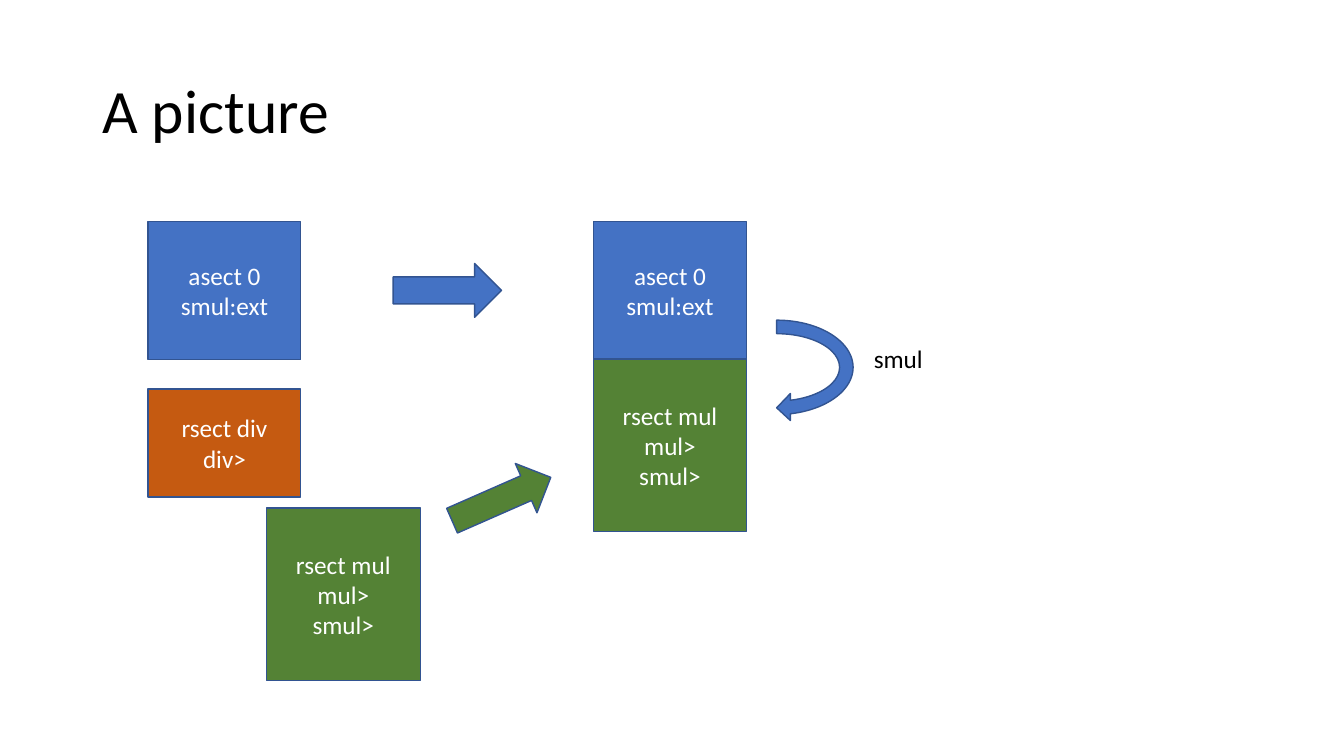
"""Build a slide showing how object sections are linked into one image."""

from dataclasses import dataclass

from pptx import Presentation
from pptx.dml.color import RGBColor
from pptx.enum.shapes import MSO_SHAPE
from pptx.enum.text import MSO_ANCHOR, MSO_AUTO_SIZE, PP_ALIGN
from pptx.shapes.autoshape import Shape
from pptx.slide import Slide
from pptx.text.text import TextFrame
from pptx.util import Pt

RECTANGLE = MSO_SHAPE.RECTANGLE
RIGHT_ARROW = MSO_SHAPE.RIGHT_ARROW
CIRCULAR_ARROW = MSO_SHAPE.CIRCULAR_ARROW
LEFT = PP_ALIGN.LEFT
CENTER = PP_ALIGN.CENTER
MIDDLE = MSO_ANCHOR.MIDDLE
NO_AUTO_SIZE = MSO_AUTO_SIZE.NONE
FIT_SHAPE = MSO_AUTO_SIZE.SHAPE_TO_FIT_TEXT
TITLE_ONLY_LAYOUT = 5


@dataclass(frozen=True)
class Theme:
    font: str = "Calibri"
    title_size: float = 44
    body_size: float = 18
    line_width: float = 1
    black: RGBColor = RGBColor(0x00, 0x00, 0x00)
    white: RGBColor = RGBColor(0xFF, 0xFF, 0xFF)
    blue: RGBColor = RGBColor(0x44, 0x72, 0xC4)
    green: RGBColor = RGBColor(0x54, 0x82, 0x35)
    orange: RGBColor = RGBColor(0xC5, 0x5A, 0x11)
    outline: RGBColor = RGBColor(0x32, 0x54, 0x91)


THEME = Theme()


@dataclass(frozen=True)
class Box:
    left: float
    top: float
    width: float
    height: float


@dataclass(frozen=True)
class Section:
    lines: tuple[str, ...]
    fill: RGBColor
    height: float


@dataclass(frozen=True)
class PlacedSection:
    section: Section
    left: float
    top: float
    width: float


@dataclass(frozen=True)
class Arrow:
    kind: MSO_SHAPE
    box: Box
    fill: RGBColor
    rotation: float = 0


MAIN = Section(("asect 0", "smul:ext"), THEME.blue, 98.64)
DIVIDE = Section(("rsect div", "div>"), THEME.orange, 77.04)
MULTIPLY = Section(("rsect mul", "mul>", "smul>"), THEME.green, 123.12)

SOURCE_LEFT = 105.84
IMAGE_LEFT = 424.08
FIRST_TOP = 158.4
SECTION_WIDTH = 109

SECTIONS = (
    PlacedSection(MAIN, SOURCE_LEFT, FIRST_TOP, SECTION_WIDTH),
    PlacedSection(MULTIPLY, 190.2, 362.88, 110),
    PlacedSection(DIVIDE, SOURCE_LEFT, 277.92, SECTION_WIDTH),
    PlacedSection(MAIN, IMAGE_LEFT, FIRST_TOP, SECTION_WIDTH),
    PlacedSection(MULTIPLY, IMAGE_LEFT, FIRST_TOP + MAIN.height - 0.5, SECTION_WIDTH),
)

ARROWS = (
    Arrow(RIGHT_ARROW, Box(280.8, 188.2, 77.5, 38.5), THEME.blue),
    Arrow(RIGHT_ARROW, Box(319.68, 337.2, 77.04, 38.5), THEME.green, 336.3),
    Arrow(CIRCULAR_ARROW, Box(516.24, 203.04, 77.04, 118.8), THEME.blue, 90),
)

TITLE_BOX = Box(66, 28.75, 828, 104.4)
LABEL_BOX = Box(617.04, 241.92, 49.68, 29)


def write_lines(
    frame: TextFrame, lines: tuple[str, ...], size: float, color: RGBColor, alignment: PP_ALIGN
) -> None:
    for index, line in enumerate(lines):
        paragraph = frame.paragraphs[0] if index == 0 else frame.add_paragraph()
        paragraph.alignment = alignment
        run = paragraph.add_run()
        run.text = line
        run.font.name = THEME.font
        run.font.size = Pt(size)
        run.font.color.rgb = color


def add_outlined_shape(slide: Slide, kind: MSO_SHAPE, box: Box, fill: RGBColor) -> Shape:
    shape = slide.shapes.add_shape(
        kind, Pt(box.left), Pt(box.top), Pt(box.width), Pt(box.height)
    )
    shape.shadow.inherit = False
    shape.fill.solid()
    shape.fill.fore_color.rgb = fill
    shape.line.color.rgb = THEME.outline
    shape.line.width = Pt(THEME.line_width)
    return shape


def add_section(slide: Slide, placed: PlacedSection) -> None:
    section = placed.section
    box = Box(placed.left, placed.top, placed.width, section.height)
    shape = add_outlined_shape(slide, RECTANGLE, box, section.fill)
    shape.text_frame.vertical_anchor = MIDDLE
    write_lines(shape.text_frame, section.lines, THEME.body_size, THEME.white, CENTER)


def add_arrow(slide: Slide, arrow: Arrow) -> None:
    shape = add_outlined_shape(slide, arrow.kind, arrow.box, arrow.fill)
    shape.rotation = arrow.rotation


def add_title(slide: Slide, text: str, box: Box) -> None:
    title = slide.shapes.title
    title.left, title.top = Pt(box.left), Pt(box.top)
    title.width, title.height = Pt(box.width), Pt(box.height)
    frame = title.text_frame
    frame.auto_size = NO_AUTO_SIZE
    frame.vertical_anchor = MIDDLE
    write_lines(frame, (text,), THEME.title_size, THEME.black, LEFT)
    frame.paragraphs[0].line_spacing = 0.9


def add_label(slide: Slide, text: str, box: Box) -> None:
    label = slide.shapes.add_textbox(
        Pt(box.left), Pt(box.top), Pt(box.width), Pt(box.height)
    )
    label.text_frame.word_wrap = False
    label.text_frame.auto_size = FIT_SHAPE
    write_lines(label.text_frame, (text,), THEME.body_size, THEME.black, LEFT)


def main() -> None:
    presentation = Presentation()
    presentation.slide_width = Pt(960)
    presentation.slide_height = Pt(540)
    slide = presentation.slides.add_slide(presentation.slide_layouts[TITLE_ONLY_LAYOUT])
    add_title(slide, "A picture", TITLE_BOX)
    for placed in SECTIONS:
        add_section(slide, placed)
    for arrow in ARROWS:
        add_arrow(slide, arrow)
    add_label(slide, "smul", LABEL_BOX)
    presentation.save("out.pptx")


if __name__ == "__main__":
    main()
